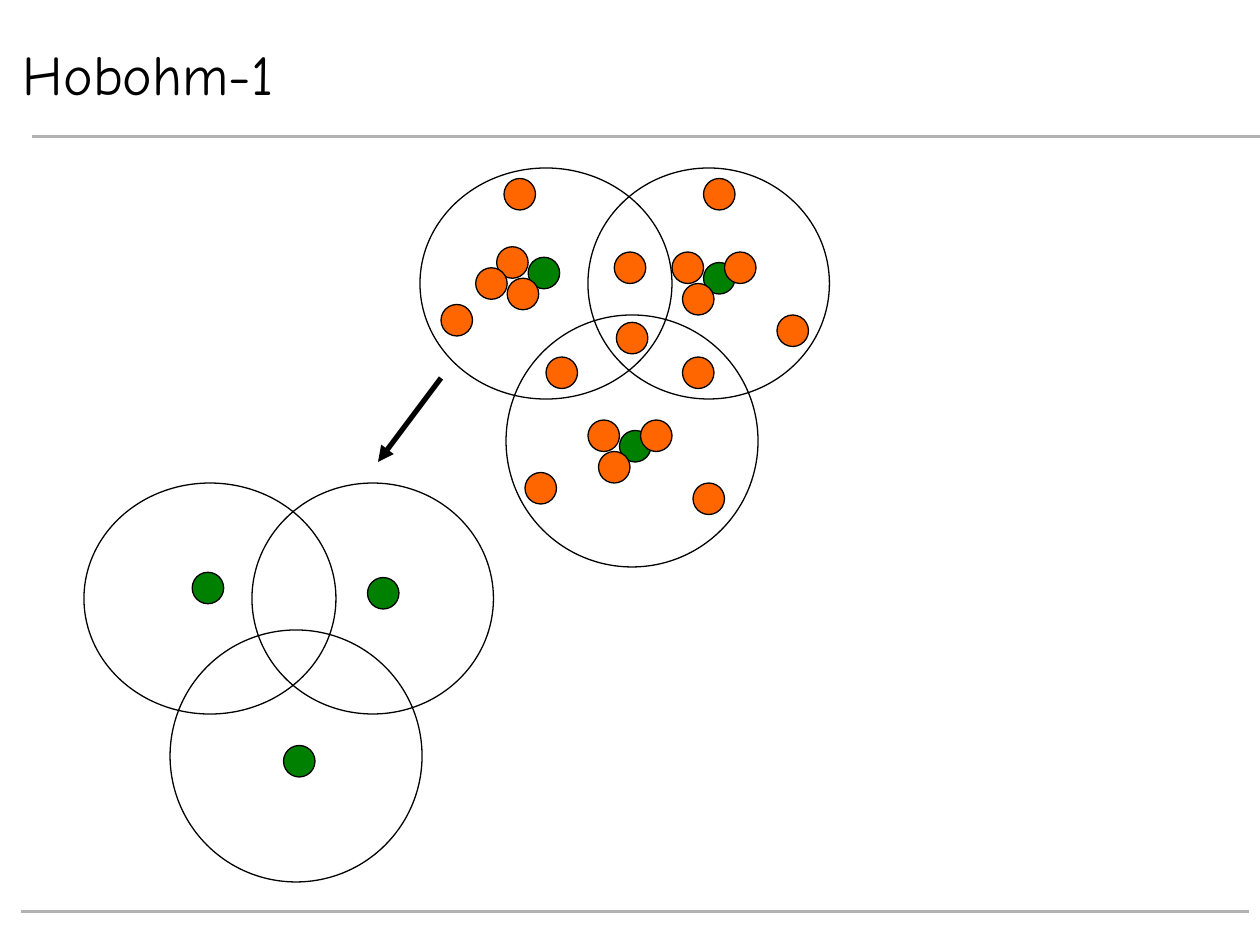
from lxml.etree import SubElement
from pptx import Presentation
from pptx.dml.color import RGBColor
from pptx.enum.shapes import MSO_CONNECTOR, MSO_SHAPE
from pptx.enum.text import MSO_ANCHOR
from pptx.oxml.ns import qn
from pptx.util import Pt

PX = 914400 // 120
DOT = 30
BLACK, WHITE, GREY = "000000", "FFFFFF", "B2B2B2"
GREEN, ORANGE = "008000", "FF6600"

# Left, top, width, height within a diagram
CLUSTERS = [(0, 0, 240, 220), (82, 140, 240, 240), (160, 0, 230, 220)]
# Left, top within a diagram
REPRESENTATIVES = [(103, 85), (270, 90), (190, 250)]
NEIGHBOURS = [
    (80, 10), (73, 75), (53, 95), (83, 105), (20, 130),
    (270, 10), (240, 80), (290, 80), (250, 110), (340, 140),
    (160, 240), (210, 240), (170, 270), (100, 290), (260, 300),
    (185, 80), (187, 147), (120, 180), (250, 180),
]


def px(*lengths):
    return [length * PX for length in lengths]


def color(hex_string):
    return RGBColor.from_string(hex_string)


def add_ellipse(shapes, left, top, width, height, fill=None):
    shape = shapes.add_shape(MSO_SHAPE.OVAL, *px(left, top, width, height))
    shape.shadow.inherit = False
    if fill:
        shape.fill.solid()
        shape.fill.fore_color.rgb = color(fill)
    else:
        shape.fill.background()
    shape.line.color.rgb = color(BLACK)
    shape.line.width = Pt(0.75)


def add_line(slide, start, end, line_color, width):
    connector = slide.shapes.add_connector(
        MSO_CONNECTOR.STRAIGHT, *px(*start, *end))
    connector.line.color.rgb = color(line_color)
    connector.line.width = Pt(width)
    SubElement(connector._element.spPr, qn("a:effectLst"))
    return connector


def add_arrow(slide, start, end):
    arrow = add_line(slide, start, end, BLACK, 3)
    SubElement(arrow.line._get_or_add_ln(), qn("a:tailEnd"), type="triangle")


def add_title(slide, text, left, top, width, height):
    box = slide.shapes.add_textbox(*px(left, top, width, height))
    box.fill.solid()
    box.fill.fore_color.rgb = color(WHITE)
    frame = box.text_frame
    frame.word_wrap = True
    frame.vertical_anchor = MSO_ANCHOR.MIDDLE
    paragraph = frame.paragraphs[0]
    paragraph.text = text
    paragraph.font.name = "Comic Neue"
    paragraph.font.size = Pt(32)
    paragraph.font.color.rgb = color(BLACK)


def add_cluster_diagram(slide, left, top, neighbours=()):
    """Draw three overlapping clusters, with their representatives and neighbours."""
    shapes = slide.shapes.add_group_shape().shapes
    for x, y, width, height in CLUSTERS:
        add_ellipse(shapes, left + x, top + y, width, height)
    for dots, fill in ((REPRESENTATIVES, GREEN), (neighbours, ORANGE)):
        for x, y in dots:
            add_ellipse(shapes, left + x, top + y, DOT, DOT, fill)


def main():
    presentation = Presentation()
    presentation.slide_width, presentation.slide_height = px(1200, 900)
    slide = presentation.slides.add_slide(presentation.slide_layouts[6])

    add_line(slide, (30, 130), (1200, 130), GREY, 1.5)
    add_line(slide, (20, 868), (1190, 868), GREY, 1.5)
    add_title(slide, "Hobohm-1", 10, 40, 940, 60)
    add_cluster_diagram(slide, 80, 460)
    add_cluster_diagram(slide, 400, 160, NEIGHBOURS)
    add_arrow(slide, (420, 360), (360, 440))

    presentation.save("out.pptx")


if __name__ == "__main__":
    main()
